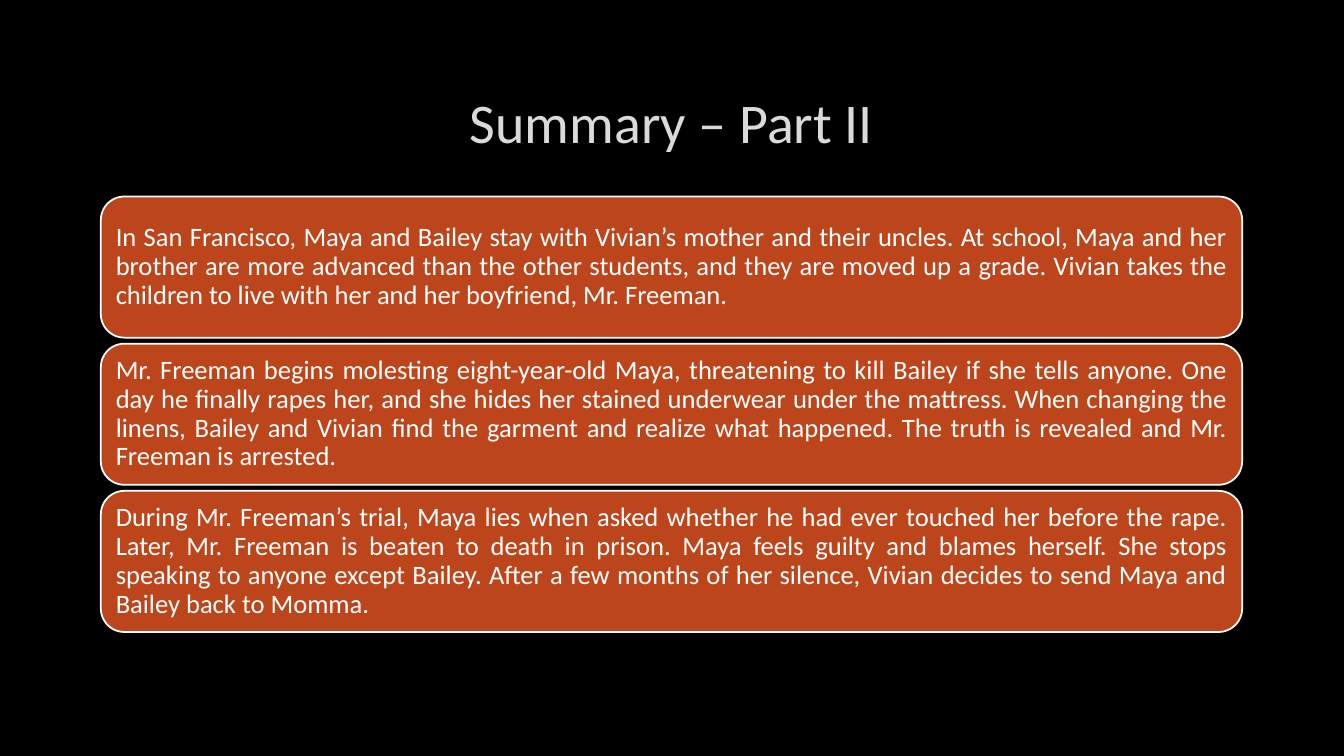
from dataclasses import dataclass

from pptx import Presentation
from pptx.dml.color import RGBColor
from pptx.enum.shapes import MSO_SHAPE
from pptx.enum.text import MSO_ANCHOR, MSO_AUTO_SIZE, PP_ALIGN
from pptx.util import Inches, Pt


@dataclass(frozen=True)
class Theme:
    font: str = "Calibri"
    background: RGBColor = RGBColor(0x00, 0x00, 0x00)
    title: RGBColor = RGBColor(0xDA, 0xDA, 0xDA)
    card: RGBColor = RGBColor(0xBC, 0x45, 0x1B)
    card_text: RGBColor = RGBColor(0xFF, 0xFF, 0xFF)
    title_size: int = 40
    card_size: int = 19
    line_width: float = 1.25


THEME = Theme()

# Shared layout, in inches
LEFT, WIDTH = 1, 11.32
CARD_TOP, CARD_HEIGHT, CARD_STEP = 1.95, 1.4, 1.46
CARD_INSET = 0.08

SUMMARY = [
    "In San Francisco, Maya and Bailey stay with Vivian’s mother and their "
    "uncles. At school, Maya and her brother are more advanced than the other "
    "students, and they are moved up a grade. Vivian takes the children to live "
    "with her and her boyfriend, Mr. Freeman. ",
    "Mr. Freeman begins molesting eight-year-old Maya, threatening to kill "
    "Bailey if she tells anyone. One day he finally rapes her, and she hides her "
    "stained underwear under the mattress. When changing the linens, Bailey and "
    "Vivian find the garment and realize what happened. The truth is revealed "
    "and Mr. Freeman is arrested.",
    "During Mr. Freeman’s trial, Maya lies when asked whether he had ever "
    "touched her before the rape. Later, Mr. Freeman is beaten to death in "
    "prison. Maya feels guilty and blames herself. She stops speaking to anyone "
    "except Bailey. After a few months of her silence, Vivian decides to send "
    "Maya and Bailey back to Momma.",
]


def set_attrs(obj, values):
    for name, value in values.items():
        setattr(obj, name, value)


def write_text(sp, text, size, color, frame, paragraph):
    """Fill a shape with one formatted paragraph."""
    tf = sp.text_frame
    set_attrs(tf, {"word_wrap": True, "auto_size": MSO_AUTO_SIZE.NONE,
                   "vertical_anchor": MSO_ANCHOR.MIDDLE, **frame})
    p = tf.paragraphs[0]
    set_attrs(p, paragraph)
    r = p.add_run()
    r.text = text
    set_attrs(r.font, {"name": THEME.font, "size": Pt(size)})
    r.font.color.rgb = color


def add_title(s, text):
    sp = s.shapes.title
    set_attrs(sp, {"left": Inches(LEFT), "top": Inches(0.67),
                   "width": Inches(WIDTH), "height": Inches(1.06)})
    write_text(sp, text, THEME.title_size, THEME.title, {},
               {"alignment": PP_ALIGN.CENTER})


def add_card(s, top, text):
    sp = s.shapes.add_shape(MSO_SHAPE.ROUNDED_RECTANGLE, Inches(LEFT),
                            Inches(top), Inches(WIDTH), Inches(CARD_HEIGHT))
    sp.shadow.inherit = False
    sp.fill.solid()
    sp.fill.fore_color.rgb = THEME.card
    sp.line.color.rgb = THEME.card_text
    sp.line.width = Pt(THEME.line_width)
    sides = ("left", "top", "right", "bottom")
    insets = {f"margin_{side}": Inches(CARD_INSET) for side in sides}
    write_text(sp, text, THEME.card_size, THEME.card_text, insets,
               {"alignment": PP_ALIGN.JUSTIFY, "line_spacing": 0.9})


def main():
    prs = Presentation()
    set_attrs(prs, {"slide_width": Inches(13.33), "slide_height": Inches(7.5)})
    s = prs.slides.add_slide(prs.slide_layouts.get_by_name("Title Only"))

    # Background
    s.background.fill.solid()
    s.background.fill.fore_color.rgb = THEME.background

    # Title and stacked summary cards
    add_title(s, "Summary – Part II")
    for i, text in enumerate(SUMMARY):
        add_card(s, CARD_TOP + i * CARD_STEP, text)

    prs.save("out.pptx")


if __name__ == "__main__":
    main()
